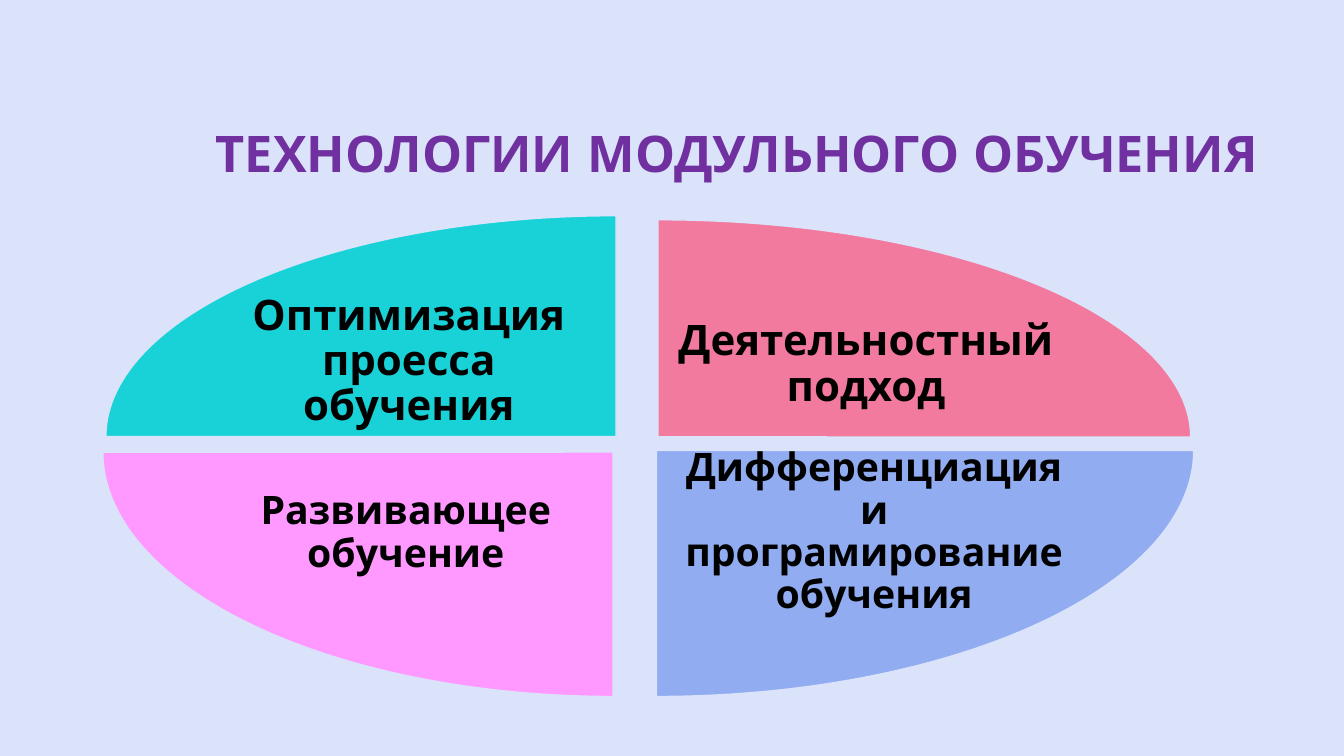
from pptx import Presentation
from pptx.dml.color import RGBColor
from pptx.enum import shapes, text
from pptx.util import Inches, Pt

BACKGROUND = RGBColor(0xDA, 0xE3, 0xFA)
PURPLE = RGBColor(0x70, 0x30, 0xA0)
BLACK = RGBColor(0, 0, 0)
ROSE = RGBColor(0xF2, 0x7A, 0x9F)
BLUE = RGBColor(0x91, 0xAC, 0xF1)
PINK = RGBColor(0xFF, 0x99, 0xFF)
TURQUOISE = RGBColor(0x19, 0xD2, 0xD7)
QUARTER_TURN = 54


def write_text(shape, wording, size, color=BLACK, align=text.PP_ALIGN.CENTER):
    frame = shape.text_frame
    frame.word_wrap = True
    frame.auto_size = text.MSO_AUTO_SIZE.NONE
    frame.vertical_anchor = text.MSO_ANCHOR.MIDDLE
    paragraph = frame.paragraphs[0]
    paragraph.text = wording
    paragraph.alignment = align
    paragraph.line_spacing = 0.9
    paragraph.font.name = "Quicksand"
    paragraph.font.size = Pt(size)
    paragraph.font.bold = True
    paragraph.font.color.rgb = color
    return frame


presentation = Presentation()
presentation.slide_width = Inches(13.33)
presentation.slide_height = Inches(7.5)
slide = presentation.slides.add_slide(presentation.slide_layouts[5])
slide.background.fill.solid()
slide.background.fill.fore_color.rgb = BACKGROUND

title = slide.shapes.title
title.left, title.top = Inches(0.24), Inches(0.84)
title.width, title.height = Inches(12.34), Inches(1.41)
write_text(title, "ТЕХНОЛОГИИ МОДУЛЬНОГО ОБУЧЕНИЯ", size=36, color=PURPLE,
           align=text.PP_ALIGN.RIGHT)

sectors = [
    ("Деятельностный подход", 30, ROSE, 3,
     (1.24, 2.18, 10.57, 4.31), (6.64, 2.98, 3.9, 1.28)),
    ("Дифференциация и програмирование обучения", 28, BLUE, 0,
     (1.18, 2.03, 10.66, 4.88), (6.7, 4.56, 3.94, 1.45)),
    ("Развивающее обучение", 28, PINK, 1,
     (1.02, 2.06, 10.12, 4.85), (2.16, 4.57, 3.73, 1.44)),
    ("Оптимизация проесса обучения", 30, TURQUOISE, 2,
     (1.05, 2.14, 10.12, 4.38), (2.19, 2.94, 3.73, 1.3)),
]

for wording, size, color, quarter, pie_box, label_box in sectors:
    sector = slide.shapes.add_shape(shapes.MSO_SHAPE.PIE, *map(Inches, pie_box))
    sector.adjustments[0] = quarter * QUARTER_TURN
    sector.adjustments[1] = (quarter + 1) % 4 * QUARTER_TURN
    sector.shadow.inherit = False
    sector.fill.solid()
    sector.fill.fore_color.rgb = color
    sector.line.color.rgb = BACKGROUND
    sector.line.width = Pt(1)

    label = slide.shapes.add_textbox(*map(Inches, label_box))
    frame = write_text(label, wording, size=size)
    frame.margin_left = frame.margin_right = Inches(0.04)
    frame.margin_top = frame.margin_bottom = Inches(0.04)

presentation.save("out.pptx")
